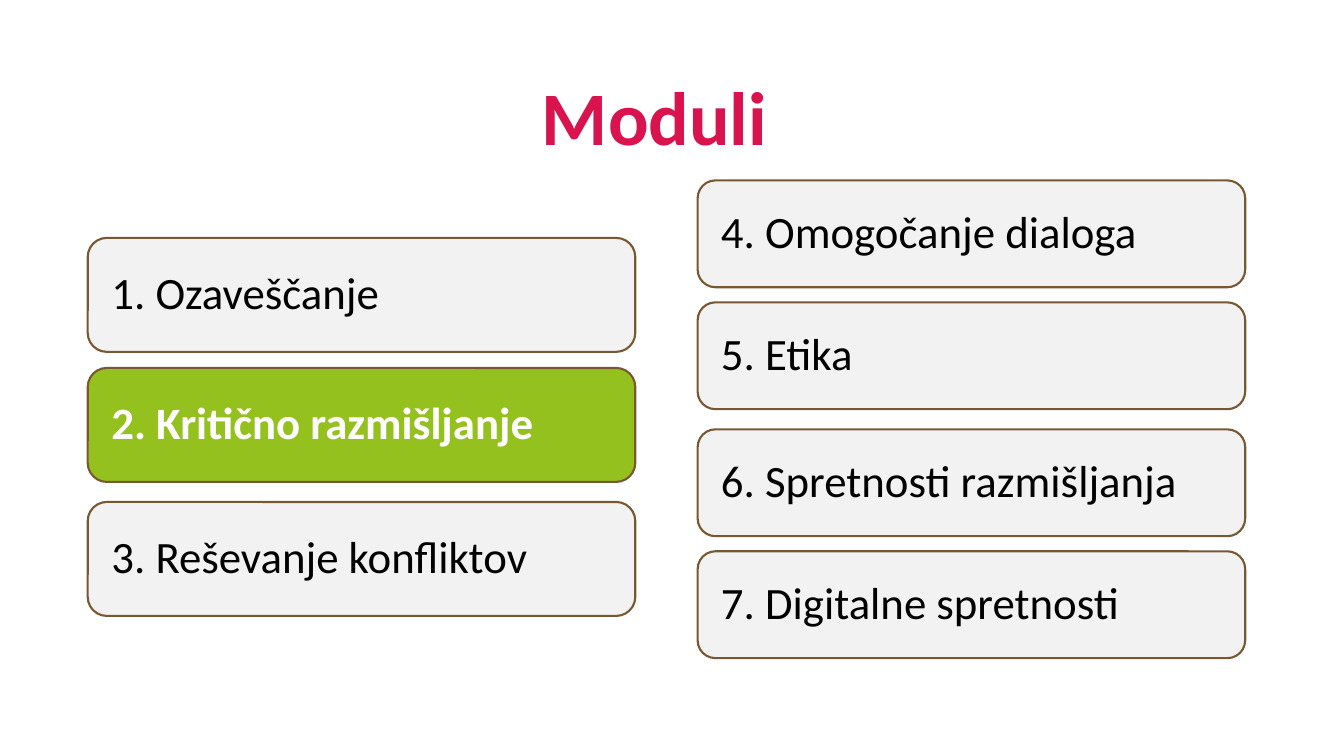
from dataclasses import dataclass

from pptx import Presentation
from pptx.dml.color import RGBColor
from pptx.enum.shapes import MSO_SHAPE
from pptx.enum.text import MSO_ANCHOR as Anchor, PP_ALIGN as Align
from pptx.shapes.autoshape import Shape
from pptx.slide import Slide
from pptx.util import Inches, Pt

SLIDE_WIDTH, SLIDE_HEIGHT = Inches(13.33), Inches(7.5)
FONT = "Calibri"
TITLE_COLOR, OUTLINE = "D8134D", "785832"
PLAIN_FILL, ACTIVE_FILL = "F2F2F2", "95C11F"
PLAIN_TEXT, ACTIVE_TEXT = "000000", "FFFFFF"
CARD_WIDTH = 40.74  # percent of the slide width
CARD_INSET = Inches(0.18)
ACTIVE_MODULE = "2. Kritično razmišljanje"


@dataclass(frozen=True)
class ModuleColumn:
    """A column of cards, measured in percent of the slide."""
    left: float
    card_height: float
    cards: tuple[tuple[float, str], ...]  # top and label


COLUMNS = (
    ModuleColumn(6.53, 15.07, (
        (31.47, "1. Ozaveščanje"),
        (48.67, ACTIVE_MODULE),
        (66.4, "3. Reševanje konfliktov"),
    )),
    ModuleColumn(51.91, 14.13, (
        (23.87, "4. Omogočanje dialoga"),
        (40, "5. Etika"),
        (56.8, "6. Spretnosti razmišljanja"),
        (72.93, "7. Digitalne spretnosti"),
    )),
)


def color(value: str) -> RGBColor:
    return RGBColor.from_string(value)


def across(percent: float) -> int:
    return round(SLIDE_WIDTH * percent / 100)


def down(percent: float) -> int:
    return round(SLIDE_HEIGHT * percent / 100)


def write(shape: Shape, text: str, size: int, text_color: str, bold: bool,
          align: Align, anchor: Anchor) -> None:
    frame = shape.text_frame
    frame.text = text
    frame.word_wrap = True
    frame.vertical_anchor = anchor
    paragraph = frame.paragraphs[0]
    paragraph.alignment = align
    paragraph.line_spacing = 0.9
    font = paragraph.runs[0].font
    font.name, font.size, font.bold = FONT, Pt(size), bold
    font.color.rgb = color(text_color)


def add_title(slide: Slide, text: str) -> None:
    box = slide.shapes.add_textbox(0, 0, across(97.4), down(22))
    write(box, text, 54, TITLE_COLOR, True, Align.CENTER, Anchor.BOTTOM)


def add_card(slide: Slide, column: ModuleColumn, top: float, label: str) -> None:
    active = label == ACTIVE_MODULE
    card = slide.shapes.add_shape(
        MSO_SHAPE.ROUNDED_RECTANGLE, across(column.left), down(top),
        across(CARD_WIDTH), down(column.card_height))
    card.shadow.inherit = False
    card.fill.solid()
    card.fill.fore_color.rgb = color(ACTIVE_FILL if active else PLAIN_FILL)
    card.line.color.rgb = color(OUTLINE)
    card.line.width = Pt(1.5)
    frame = card.text_frame
    frame.margin_left = frame.margin_right = CARD_INSET
    frame.margin_top = frame.margin_bottom = CARD_INSET
    write(card, label, 32, ACTIVE_TEXT if active else PLAIN_TEXT, active,
          Align.LEFT, Anchor.MIDDLE)


def main() -> None:
    presentation = Presentation()
    presentation.slide_width = SLIDE_WIDTH
    presentation.slide_height = SLIDE_HEIGHT
    slide = presentation.slides.add_slide(presentation.slide_layouts[6])
    add_title(slide, "Moduli")
    for column in COLUMNS:
        for top, label in column.cards:
            add_card(slide, column, top, label)
    presentation.save("out.pptx")


if __name__ == "__main__":
    main()
